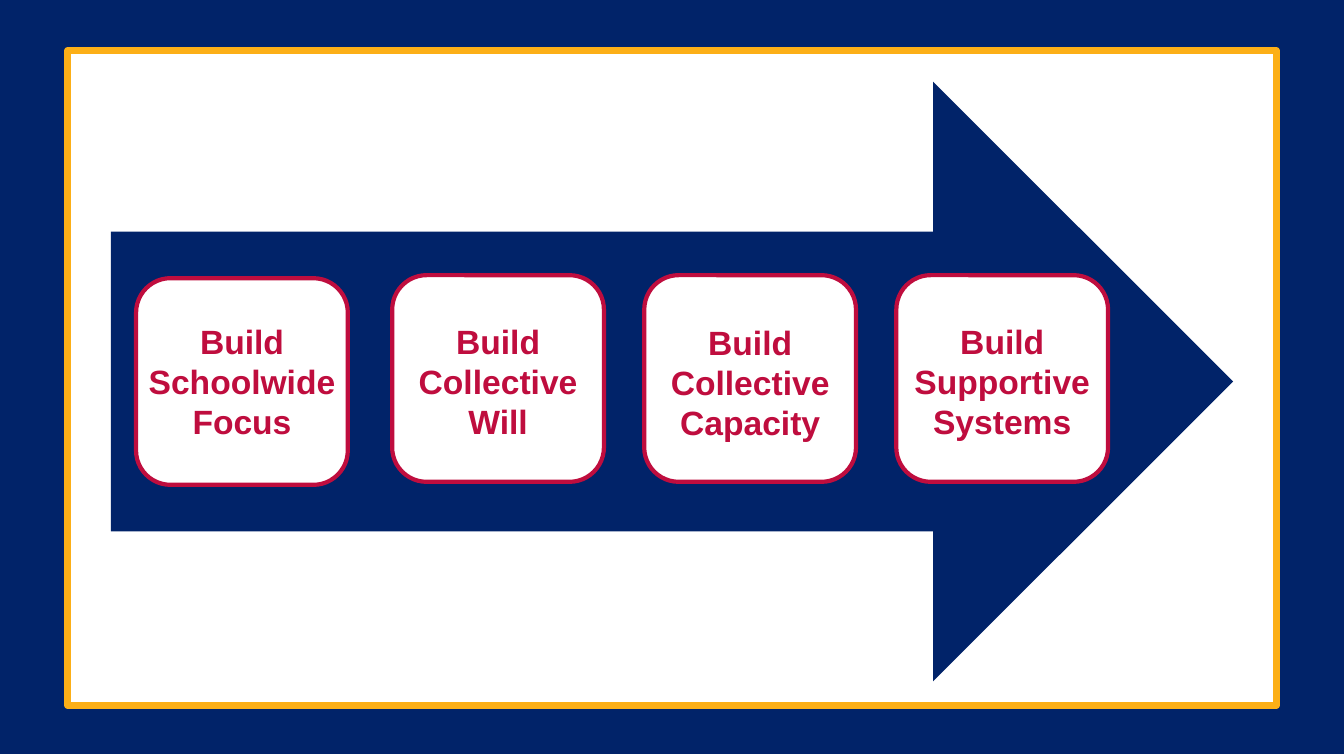
from pptx import Presentation
from pptx.dml.color import RGBColor
from pptx.enum import shapes, text
from pptx.util import Inches, Pt

NAVY, GOLD, CRIMSON, WHITE = "012369", "FCAF17", "BF0D3E", "FFFFFF"

# label, card left, card top, label top
STEPS = [
    ("Build Schoolwide Focus", 1.35, 2.76, 3.13),
    ("Build Collective Will", 3.89, 2.73, 3.13),
    ("Build Collective Capacity", 6.39, 2.73, 3.14),
    ("Build Supportive Systems", 8.89, 2.73, 3.13),
]
CARD_WIDTH, CARD_HEIGHT = 2.1, 2.05
LABEL_WIDTH, LABEL_HEIGHT = 2.12, 1.31


def color(value):
    return RGBColor.from_string(value)


def add_box(slide, kind, box, fill, line=None, line_width=0):
    shape = slide.shapes.add_shape(kind, *map(Inches, box))
    shape.shadow.inherit = False
    shape.fill.solid()
    shape.fill.fore_color.rgb = color(fill)
    if line:
        shape.line.color.rgb = color(line)
        shape.line.width = Pt(line_width)
    else:
        shape.line.fill.background()


def add_label(slide, label, box):
    frame = slide.shapes.add_textbox(*map(Inches, box)).text_frame
    frame.word_wrap = True
    frame.auto_size = text.MSO_AUTO_SIZE.SHAPE_TO_FIT_TEXT
    frame.text = label
    paragraph = frame.paragraphs[0]
    paragraph.alignment = text.PP_ALIGN.CENTER
    font = paragraph.runs[0].font
    font.name, font.size, font.bold = "Arial", Pt(24), True
    font.color.rgb = color(CRIMSON)


def main():
    presentation = Presentation()
    presentation.slide_width = Inches(13.33)
    presentation.slide_height = Inches(7.5)
    slide = presentation.slides.add_slide(presentation.slide_layouts[6])

    kinds = shapes.MSO_SHAPE
    add_box(slide, kinds.RECTANGLE, (0, -0.02, 13.33, 7.5), NAVY)
    add_box(slide, kinds.RECTANGLE, (0.67, 0.5, 11.99, 6.5), WHITE, GOLD, 4.5)
    add_box(slide, kinds.RIGHT_ARROW, (1.1, 0.81, 11.13, 5.95), NAVY)

    for label, left, top, label_top in STEPS:
        add_box(slide, kinds.ROUNDED_RECTANGLE,
                (left, top, CARD_WIDTH, CARD_HEIGHT), WHITE, CRIMSON, 3)
        label_left = left - (LABEL_WIDTH - CARD_WIDTH) / 2
        add_label(slide, label, (label_left, label_top, LABEL_WIDTH, LABEL_HEIGHT))

    presentation.save("out.pptx")


if __name__ == "__main__":
    main()
